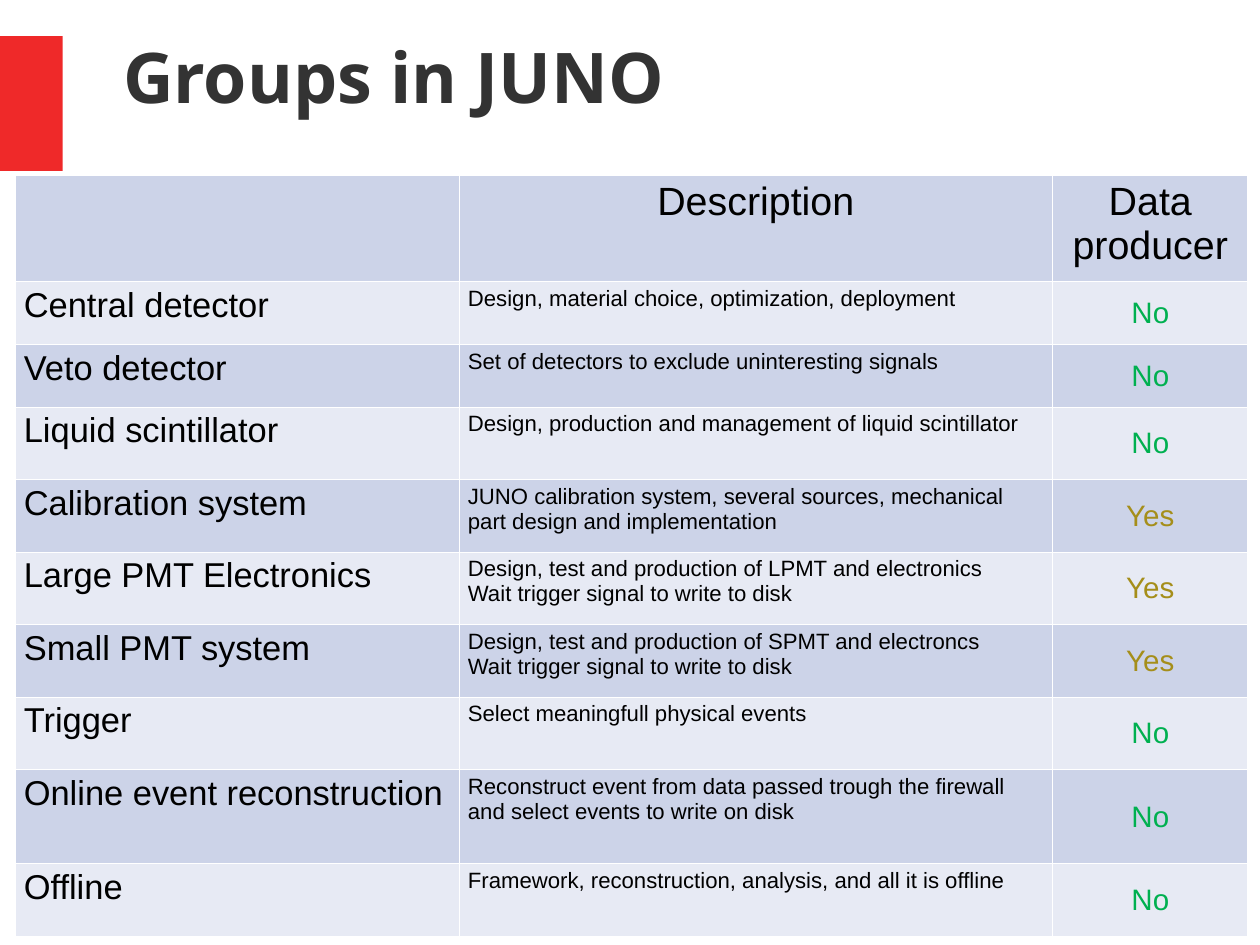
from lxml.etree import SubElement
from pptx import Presentation
from pptx.dml.color import RGBColor
from pptx.enum.shapes import MSO_SHAPE as Shape
from pptx.enum.text import MSO_ANCHOR as Anchor, PP_ALIGN as Align
from pptx.oxml.ns import qn
from pptx.util import Cm, Pt

RED = RGBColor(0xEF, 0x29, 0x29)
CHARCOAL = RGBColor(0x33, 0x33, 0x33)
BLACK = RGBColor(0, 0, 0)
GREEN = RGBColor(0x00, 0xB0, 0x50)
OCHRE = RGBColor(0xA5, 0x8E, 0x1A)
WHITE = RGBColor(0xFF, 0xFF, 0xFF)
BAND_DARK = RGBColor(0xCC, 0xD3, 0xE8)
BAND_LIGHT = RGBColor(0xE7, 0xEA, 0xF4)

ANSWER_COLORS = {"No": GREEN, "Yes": OCHRE}
COLUMN_WIDTHS = (12.73, 17.02, 5.59)
HEADINGS = ("", "Description", "Data producer")
HEADING_HEIGHT = 3.05
GROUPS = (
    ("Central detector", "Design, material choice, optimization, deployment", "No", 1.8),
    ("Veto detector", "Set of detectors to exclude uninteresting signals", "No", 1.8),
    ("Liquid scintillator", "Design, production and management of liquid scintillator", "No", 2.08),
    ("Calibration system",
     "JUNO calibration system, several sources, mechanical part design and implementation",
     "Yes", 2.08),
    ("Large PMT Electronics",
     "Design, test and production of LPMT and electronics\nWait trigger signal to write to disk",
     "Yes", 2.08),
    ("Small PMT system",
     "Design, test and production of SPMT and electroncs\nWait trigger signal to write to disk",
     "Yes", 2.08),
    ("Trigger", "Select meaningfull physical events", "No", 2.08),
    ("Online event reconstruction",
     "Reconstruct event from data passed trough the firewall and select events to write on disk",
     "No", 2.69),
    ("Offline", "Framework, reconstruction, analysis, and all it is offline", "No", 2.08),
)


class SlideBuilder:
    """Draws the elements of one slide in a shared style."""

    title_font = "Noto Sans"
    body_font = "Arial"

    def __init__(self, slide):
        self.slide = slide

    def set_text(self, frame, text, font, size, color, bold=False, align=Align.LEFT):
        frame.text = text
        for paragraph in frame.paragraphs:
            paragraph.alignment = align
            paragraph.font.name = font
            paragraph.font.size = Pt(size)
            paragraph.font.bold = bold
            paragraph.font.color.rgb = color

    def block(self, left, top, width, height, color):
        accent = self.slide.shapes.add_shape(
            Shape.RECTANGLE, Cm(left), Cm(top), Cm(width), Cm(height))
        accent.shadow.inherit = False
        accent.fill.solid()
        accent.fill.fore_color.rgb = color
        accent.line.fill.background()

    def title(self, text, left, top, width, height):
        frame = self.slide.shapes.add_textbox(
            Cm(left), Cm(top), Cm(width), Cm(height)).text_frame
        frame.word_wrap = True
        frame.vertical_anchor = Anchor.MIDDLE
        frame.margin_left = frame.margin_right = 0
        frame.margin_top = frame.margin_bottom = 0
        self.set_text(frame, text, self.title_font, 56.8, CHARCOAL, bold=True)

    def table(self, left, top, widths, heights):
        grid = self.slide.shapes.add_table(
            len(heights), len(widths), Cm(left), Cm(top),
            Cm(sum(widths)), Cm(sum(heights))).table
        grid.first_row = grid.horz_banding = False
        for column, width in zip(grid.columns, widths):
            column.width = Cm(width)
        for row, height in zip(grid.rows, heights):
            row.height = Cm(height)
        return grid

    def cell(self, cell, text, size, fill, color=BLACK, align=Align.LEFT, anchor=Anchor.TOP):
        self.set_text(cell.text_frame, text, self.body_font, size, color, align=align)
        cell.vertical_anchor = anchor
        properties = cell._tc.get_or_add_tcPr()
        for side in ("a:lnL", "a:lnR", "a:lnT", "a:lnB"):
            border = SubElement(properties, qn(side), w=str(Pt(1)))
            paint = SubElement(border, qn("a:solidFill"))
            SubElement(paint, qn("a:srgbClr"), val=str(WHITE))
        cell.fill.solid()
        cell.fill.fore_color.rgb = fill


def main():
    deck = Presentation()
    deck.slide_width, deck.slide_height = Cm(36.12), Cm(27.1)
    builder = SlideBuilder(deck.slides.add_slide(deck.slide_layouts[6]))

    builder.block(0, 1.04, 1.8, 3.86, RED)
    builder.title("Groups in JUNO", 3.53, 0.97, 29.06, 2.41)

    heights = [HEADING_HEIGHT] + [group[-1] for group in GROUPS]
    grid = builder.table(0.43, 5.03, COLUMN_WIDTHS, heights)
    for column, heading in enumerate(HEADINGS):
        builder.cell(grid.cell(0, column), heading, 32, BAND_DARK, align=Align.CENTER)
    for row, (name, description, answer, _) in enumerate(GROUPS, start=1):
        band = BAND_LIGHT if row % 2 else BAND_DARK
        builder.cell(grid.cell(row, 0), name, 28, band)
        builder.cell(grid.cell(row, 1), description, 18, band)
        builder.cell(grid.cell(row, 2), answer, 24, band, ANSWER_COLORS[answer],
                     Align.CENTER, Anchor.MIDDLE)

    deck.save("out.pptx")


if __name__ == "__main__":
    main()
